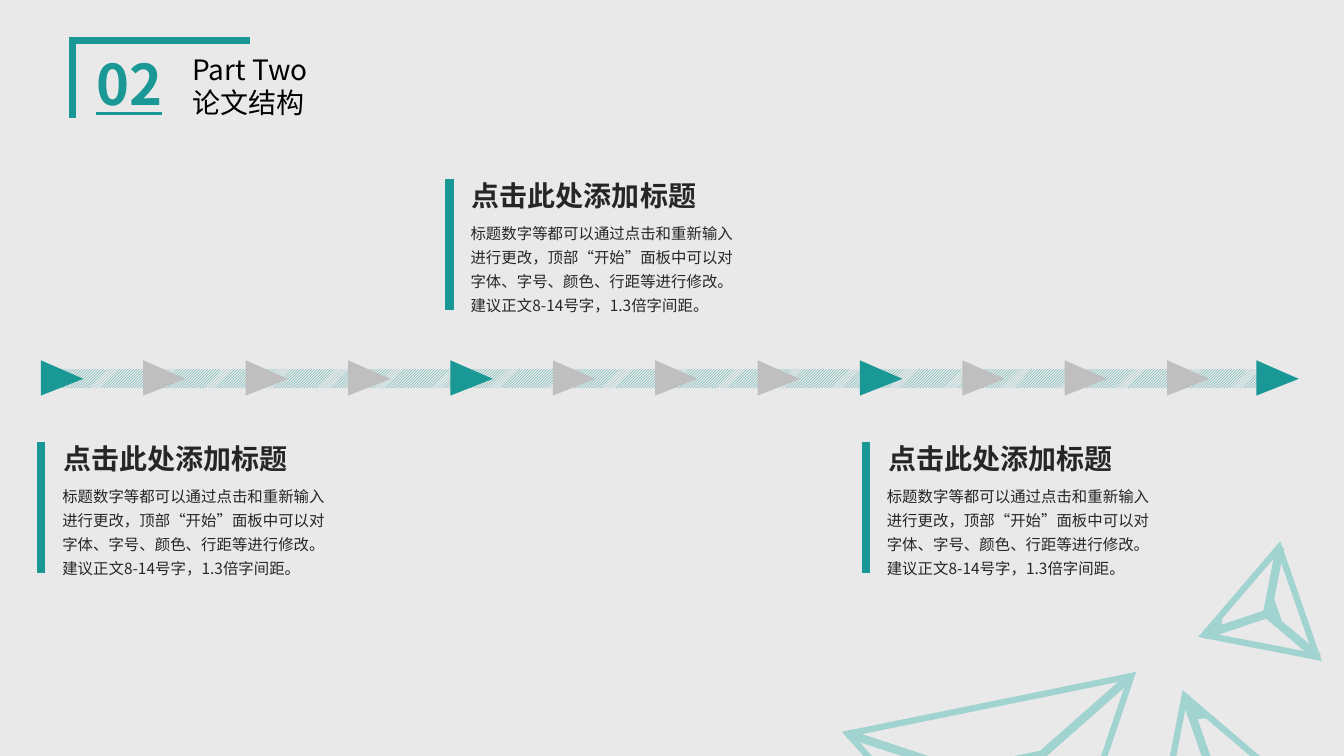
"""Build the thesis structure slide: section heading, arrow timeline and three captions."""
from dataclasses import dataclass

from lxml import etree
from pptx import Presentation
from pptx.dml.color import RGBColor
from pptx.enum import dml, shapes, text
from pptx.oxml import ns
from pptx.shapes.autoshape import Shape
from pptx.slide import Slide
from pptx.util import Cm, Pt

Point = tuple[float, float]


@dataclass(frozen=True)
class Theme:
    background: str = "E9E9E9"
    accent: str = "1A9895"
    pale: str = "A1D3D0"
    grey: str = "BFBFBF"
    ink: str = "262626"
    black: str = "000000"
    font: str = "Noto Sans CJK SC"
    number_size: float = 40
    title_size: float = 20
    body_size: float = 11
    frame_width: float = 4.5
    bar_width: float = 6
    hairline: float = 1


@dataclass(frozen=True)
class Triangle:
    left: float
    top: float
    width: float
    height: float
    rotation: float


@dataclass(frozen=True)
class Gem:
    outline: Triangle
    hub: Point
    spokes: tuple[Point, ...]
    facet: Triangle | None = None
    chip: tuple[Point, ...] = ()


@dataclass(frozen=True)
class Caption:
    left: float
    top: float
    title: str
    body: str


THEME = Theme()
TITLE = "点击此处添加标题"
BODY = (
    "标题数字等都可以通过点击和重新输入进行更改，顶部“开始”面板中可以对"
    "字体、字号、颜色、行距等进行修改。建议正文8-14号字，1.3倍字间距。"
)
CAPTIONS = [Caption(left, top, TITLE, BODY)
            for left, top in ((1.04, 11.13), (11.33, 4.5), (21.82, 11.13))]
GEMS = [
    Gem(Triangle(28.52, 17.45, 3.73, 3.2, 340.7), (30.56, 19.53), ((29.87, 17.55),),
        chip=((30.12, 18.11), (30.43, 18.08), (30, 17.73))),
    Gem(Triangle(21.92, 17.7, 7.29, 6.27, 168.5), (25.36, 19.81),
        ((28.5, 17.04), (21.36, 18.49)), facet=Triangle(24.33, 19.13, 1.9, 0.58, 168.5)),
    Gem(Triangle(30.07, 14.33, 2.92, 2.51, 250.8), (31.93, 15.47),
        ((30.35, 16), (33.22, 16.56), (32.26, 13.79)),
        facet=Triangle(31.7, 15.29, 0.76, 0.23, 250.8),
        chip=((30.78, 15.8), (30.78, 15.57), (30.51, 15.9))),
]
ARROW_COUNT = 12
ARROW_STEP = 2.58
ARROWS_PER_STAGE = 4
FIRST_ARROW = 1.12
LAST_ARROW = 31.75


def color(value: str) -> RGBColor:
    """Turn a hex string into a colour."""
    return RGBColor.from_string(value)


def paint(shape: Shape, fill: str | None, line: str | None = None, width: float = 0) -> None:
    """Set the fill and the mitred outline of a shape."""
    shape.shadow.inherit = False
    if fill:
        shape.fill.solid()
        shape.fill.fore_color.rgb = color(fill)
    else:
        shape.fill.background()
    if line:
        shape.line.color.rgb = color(line)
        shape.line.width = Pt(width)
        outline = shape.line._get_or_add_ln()
        etree.SubElement(outline, ns.qn("a:miter"), lim="800000")
    else:
        shape.line.fill.background()


def add_triangle(slide: Slide, triangle: Triangle, fill: str,
                 line: str | None = None, width: float = 0) -> Shape:
    """Add a rotated isosceles triangle."""
    shape = slide.shapes.add_shape(
        shapes.MSO_SHAPE.ISOSCELES_TRIANGLE, Cm(triangle.left), Cm(triangle.top),
        Cm(triangle.width), Cm(triangle.height))
    shape.rotation = triangle.rotation
    paint(shape, fill, line, width)
    return shape


def add_outline(slide: Slide, points: tuple[Point, ...], fill: str | None,
                line: str, width: float) -> None:
    """Add a freeform, closed only when it is filled."""
    start, *others = [(Cm(x), Cm(y)) for x, y in points]
    builder = slide.shapes.build_freeform(*start)
    builder.add_line_segments(others, close=fill is not None)
    paint(builder.convert_to_shape(), fill, line, width)


def add_line(slide: Slide, start: Point, end: Point, line: str) -> None:
    """Add a thick straight line without a shadow."""
    connector = slide.shapes.add_connector(
        shapes.MSO_CONNECTOR.STRAIGHT, *(Cm(value) for value in start + end))
    connector.line.color.rgb = color(line)
    connector.line.width = Pt(THEME.bar_width)
    etree.SubElement(connector._element.spPr, ns.qn("a:effectLst"))


def add_text(slide: Slide, content: str, left: float, top: float, width: float, height: float,
             *, size: float, ink: str, bold: bool = False, underline: bool = False,
             spacing: float | None = None) -> None:
    """Add a wrapping text box with one paragraph per line of content."""
    box = slide.shapes.add_textbox(Cm(left), Cm(top), Cm(width), Cm(height))
    frame = box.text_frame
    frame.word_wrap = True
    frame.auto_size = text.MSO_AUTO_SIZE.SHAPE_TO_FIT_TEXT
    frame.text = content
    for paragraph in frame.paragraphs:
        if spacing:
            paragraph.line_spacing = spacing
        for run in paragraph.runs:
            font = run.font
            font.name, font.size = THEME.font, Pt(size)
            font.bold, font.underline = bold, underline
            font.color.rgb = color(ink)
            etree.SubElement(run._r.get_or_add_rPr(), ns.qn("a:ea"), typeface=THEME.font)


def add_gem(slide: Slide, gem: Gem) -> None:
    """Draw one decorative faceted triangle."""
    add_triangle(slide, gem.outline, THEME.background, THEME.pale, THEME.frame_width)
    for spoke in gem.spokes:
        add_line(slide, spoke, gem.hub, THEME.pale)
    if gem.facet:
        add_triangle(slide, gem.facet, THEME.pale, THEME.pale, THEME.hairline)
    if gem.chip:
        add_outline(slide, gem.chip, THEME.pale, THEME.pale, THEME.hairline)


def add_heading(slide: Slide) -> None:
    """Draw the corner frame, section number and section name."""
    add_outline(slide, ((1.83, 2.97), (1.83, 1.02), (6.3, 1.02)), None,
                THEME.accent, THEME.frame_width)
    add_text(slide, "02", 2.18, 1.12, 2.41, 1.96, size=THEME.number_size,
             ink=THEME.accent, bold=True, underline=True)
    add_text(slide, "Part Two\n论文结构", 4.6, 1.19, 6.1, 1.96,
             size=THEME.title_size, ink=THEME.black)


def add_timeline(slide: Slide) -> None:
    """Draw the hatched band and its arrows, with each stage start accented."""
    band = slide.shapes.add_shape(
        shapes.MSO_SHAPE.RECTANGLE, Cm(1.04), Cm(9.3), Cm(31.06), Cm(0.48))
    paint(band, None)
    band.fill.patterned()
    band.fill.pattern = dml.MSO_PATTERN.LIGHT_UPWARD_DIAGONAL
    band.fill.fore_color.rgb = color(THEME.accent)
    band.fill.back_color.rgb = color(THEME.background)
    lefts = [FIRST_ARROW + ARROW_STEP * index for index in range(ARROW_COUNT)]
    for index, left in enumerate([*lefts, LAST_ARROW]):
        fill = THEME.grey if index % ARROWS_PER_STAGE else THEME.accent
        arrow = add_triangle(slide, Triangle(left, 8.99, 0.89, 1.07, 90), fill)
        arrow.adjustments[0] = 0.525


def add_caption(slide: Slide, caption: Caption) -> None:
    """Draw a vertical bar with a title and body beside it."""
    left, top = caption.left, caption.top
    add_line(slide, (left, top), (left, top + 3.32), THEME.accent)
    add_text(slide, caption.title, left + 0.31, top - 0.13, 6.68, 1.12,
             size=THEME.title_size, ink=THEME.ink, bold=True)
    add_text(slide, caption.body, left + 0.28, top + 0.89, 7.26, 2.69,
             size=THEME.body_size, ink=THEME.ink, spacing=1.3)


def main() -> None:
    """Build and save the presentation."""
    presentation = Presentation()
    presentation.slide_width, presentation.slide_height = Cm(33.87), Cm(19.05)
    slide = presentation.slides.add_slide(presentation.slide_layouts[6])
    slide.background.fill.solid()
    slide.background.fill.fore_color.rgb = color(THEME.background)
    for gem in GEMS:
        add_gem(slide, gem)
    add_heading(slide)
    add_timeline(slide)
    for caption in CAPTIONS:
        add_caption(slide, caption)
    presentation.save("out.pptx")


if __name__ == "__main__":
    main()
